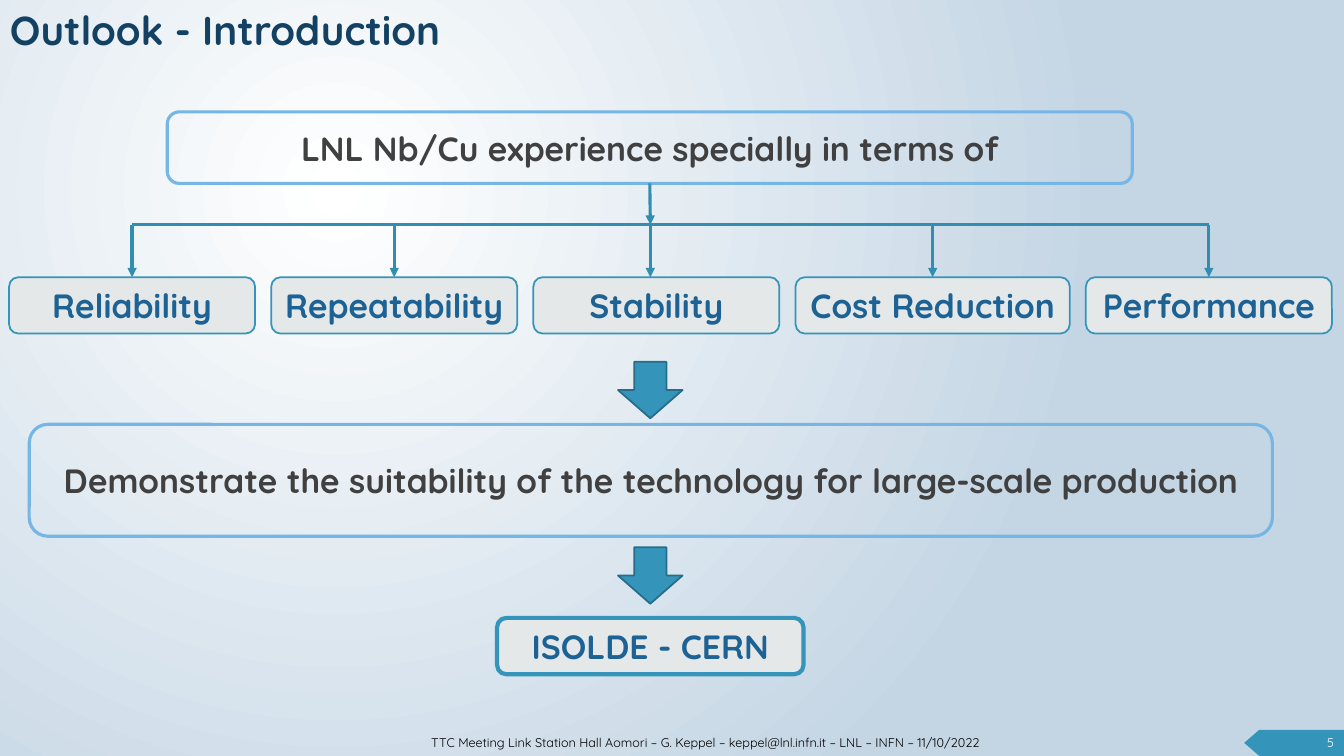
from lxml import etree
from pptx import Presentation
from pptx.dml.color import RGBColor
from pptx.enum.shapes import MSO_CONNECTOR, MSO_SHAPE
from pptx.enum.text import MSO_ANCHOR, PP_ALIGN
from pptx.oxml.ns import qn
from pptx.util import Inches, Pt

ROUNDED = MSO_SHAPE.ROUNDED_RECTANGLE
DOWN_ARROW = MSO_SHAPE.DOWN_ARROW
STRAIGHT = MSO_CONNECTOR.STRAIGHT
LEFT, CENTER, RIGHT = PP_ALIGN.LEFT, PP_ALIGN.CENTER, PP_ALIGN.RIGHT
TOP, MIDDLE = MSO_ANCHOR.TOP, MSO_ANCHOR.MIDDLE

COLORS = {
    "white": "FFFFFF",
    "mist": "C4D5E4",
    "title": "134163",
    "black": "000000",
    "page": "FEFFFF",
    "body": "404040",
    "frame": "75B6E5",
    "tile": "E4E8E8",
    "accent": "3494BA",
    "label": "1D6294",
    "link": "328DB2",
    "arrow_edge": "266D8A",
}


class SlideBuilder:
    font = "Quicksand"

    def __init__(self, slide):
        self.slide = slide
        self.shapes = slide.shapes

    def color(self, name):
        return RGBColor.from_string(COLORS[name])

    def background(self, inner, outer):
        fill = self.slide.background.fill
        fill.gradient()
        for stop, name, position in zip(fill.gradient_stops, (inner, outer), (0, 1)):
            stop.color.rgb = self.color(name)
            stop.position = position
        gradient = self.slide.element.find(".//" + qn("a:gradFill"))
        gradient.remove(gradient.find(qn("a:lin")))
        circle = etree.SubElement(gradient, qn("a:path"), path="circle")
        etree.SubElement(circle, qn("a:fillToRect"),
                         l="50000", t="50000", r="100000", b="100000")

    def set_text(self, shape, text, size, color, bold, align, anchor, wrap=True):
        frame = shape.text_frame
        frame.word_wrap = wrap
        frame.vertical_anchor = anchor
        paragraph = frame.paragraphs[0]
        paragraph.alignment = align
        run = paragraph.add_run()
        run.text = text
        run.font.name = self.font
        run.font.size = Pt(size)
        run.font.bold = bold
        run.font.color.rgb = self.color(color)

    def paint(self, shape, fill, line, weight):
        shape.shadow.inherit = False
        if fill:
            shape.fill.solid()
            shape.fill.fore_color.rgb = self.color(fill)
        else:
            shape.fill.background()
        if line:
            shape.line.color.rgb = self.color(line)
            shape.line.width = Pt(weight)
        else:
            shape.line.fill.background()

    def text(self, box, text, size, color, bold=False, align=LEFT, anchor=TOP):
        area = self.shapes.add_textbox(*map(Inches, box))
        self.set_text(area, text, size, color, bold, align, anchor)

    def box(self, box, text, color, fill, line, weight):
        shape = self.shapes.add_shape(ROUNDED, *map(Inches, box))
        self.paint(shape, fill, line, weight)
        self.set_text(shape, text, 24, color, True, CENTER, MIDDLE, wrap=False)
        return shape

    def block_arrow(self, box):
        shape = self.shapes.add_shape(DOWN_ARROW, *map(Inches, box))
        self.paint(shape, "accent", "arrow_edge", 1.25)

    def outline(self, points, fill):
        corners = [(Inches(x), Inches(y)) for x, y in points]
        builder = self.shapes.build_freeform(*corners[0])
        builder.add_line_segments(corners[1:])
        self.paint(builder.convert_to_shape(), fill, None, 0)

    def link(self, start, end, arrow=False, source=None, target=None):
        connector = self.shapes.add_connector(STRAIGHT, *map(Inches, start + end))
        if source is not None:
            connector.begin_connect(source, 2)
        if target is not None:
            connector.end_connect(target, 0)
        connector.line.color.rgb = self.color("link")
        connector.line.width = Pt(2.25)
        properties = connector.element.spPr
        if arrow:
            etree.SubElement(properties.find(qn("a:ln")), qn("a:tailEnd"), type="triangle")
        etree.SubElement(properties, qn("a:effectLst"))


def main():
    deck = Presentation()
    deck.slide_width, deck.slide_height = Inches(13.33), Inches(7.5)
    page = SlideBuilder(deck.slides.add_slide(deck.slide_layouts[6]))
    page.background("white", "mist")

    page.outline([(12.34, 7.37), (12.49, 7.24), (13.33, 7.24),
                  (13.33, 7.5), (12.49, 7.5)], "accent")
    page.text((0, 0, 10.81, 0.57), "Outlook - Introduction", 28.8, "title", bold=True)
    page.text((12.58, 7.24, 0.75, 0.26), "5", 9, "page", align=RIGHT, anchor=MIDDLE)
    page.text((2.83, 7.24, 8.33, 0.26),
              "TTC Meeting Link Station Hall Aomori – G. Keppel – "
              "keppel@lnl.infn.it – LNL – INFN – 11/10/2022",
              9, "black", align=CENTER)

    experience = page.box((1.66, 1.11, 9.57, 0.71),
                          "LNL Nb/Cu experience specially in terms of",
                          "body", None, "frame", 2.25)
    page.box((0.29, 4.21, 12.33, 1.11),
             "Demonstrate the suitability of the technology for large-scale production",
             "body", None, "frame", 2.25)
    page.box((4.93, 6.13, 3.04, 0.56), "ISOLDE - CERN", "label", "tile", "accent", 3)

    trunk, rail, tile_top, gap = 6.45, 2.23, 2.75, 0.16
    page.link((trunk, 1.82), (trunk, rail), arrow=True, source=experience)

    left = 0.09
    centers = []
    for quality, width in (("Reliability", 2.44), ("Repeatability", 2.44),
                           ("Stability", 2.44), ("Cost Reduction", 2.72),
                           ("Performance", 2.44)):
        tile = page.box((left, tile_top, width, 0.56), quality,
                        "label", "tile", "accent", 1.25)
        center = left + width / 2
        centers.append(center)
        if quality == "Stability":
            page.link((trunk, rail), (trunk, tile_top), arrow=True)
        else:
            page.link((center, rail), (center, tile_top), arrow=True, target=tile)
        left += width + gap

    for end in (centers[0], centers[-1]):
        page.link((6.67, rail), (end, rail))

    for top in (3.59, 5.43):
        page.block_arrow((trunk - 0.32, top, 0.64, 0.56))

    deck.save("out.pptx")


if __name__ == "__main__":
    main()
